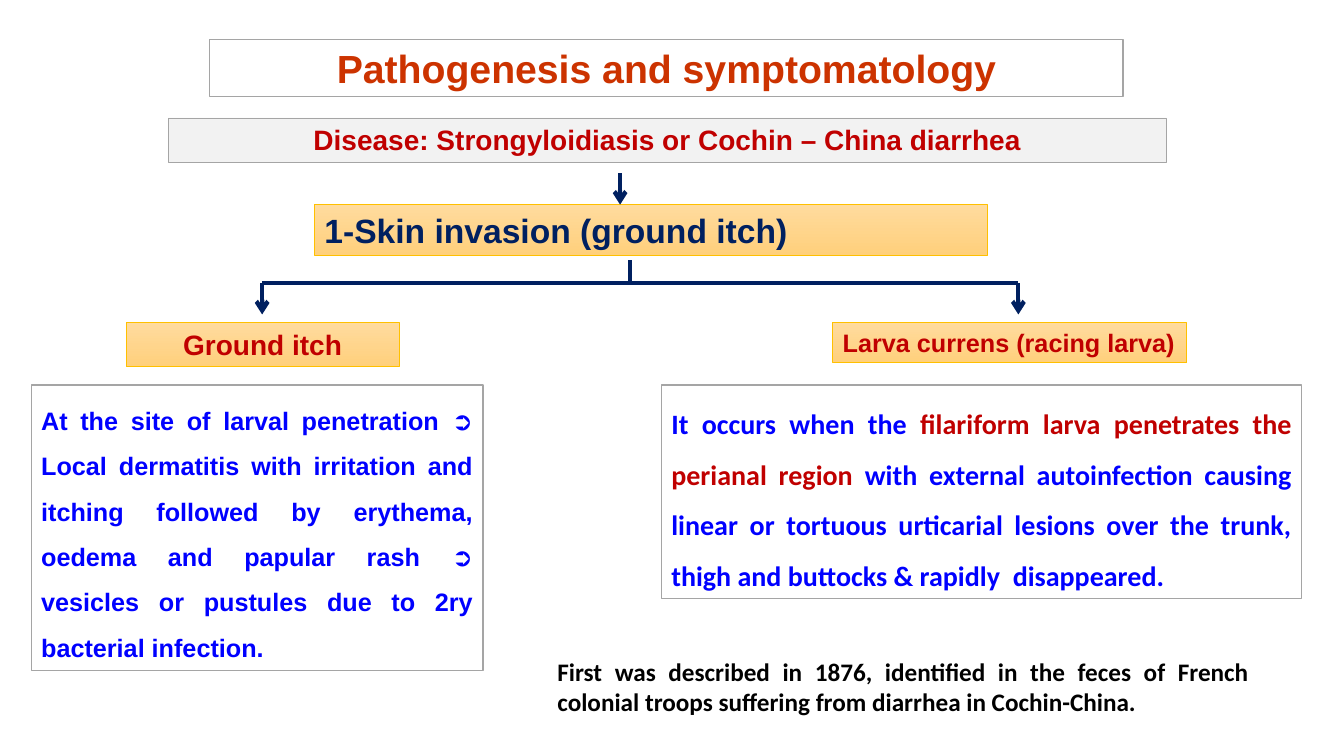
"""Build the slide on the pathogenesis and symptomatology of strongyloidiasis."""
from dataclasses import dataclass

from lxml.etree import SubElement
from pptx import Presentation
from pptx.dml.color import RGBColor
from pptx.enum.shapes import MSO_CONNECTOR, MSO_SHAPE
from pptx.enum.text import MSO_ANCHOR, MSO_AUTO_SIZE, PP_ALIGN
from pptx.oxml.ns import qn
from pptx.util import Inches, Pt

NAVY, RED, BLUE, GREY, GOLD = "002060", "C00000", "0000FF", "A5A5A5", "FFC000"
ORANGE = ("FFDB9E", "FFD07C")
WHITE = ("FFFFFF",)
LEFT, CENTER, JUSTIFY = PP_ALIGN.LEFT, PP_ALIGN.CENTER, PP_ALIGN.JUSTIFY


@dataclass
class Box:
    left: float
    top: float
    width: float
    height: float
    runs: list[tuple[str, str]]
    size: int
    align: PP_ALIGN = CENTER
    font: str = "Arial"
    fill: tuple[str, ...] = ()
    line: str = GREY
    line_width: float = 0.5
    spacing: float = 1.0
    wrap: bool = True


@dataclass
class Link:
    x1: float
    y1: float
    x2: float
    y2: float
    arrow: bool = False


BOXES = [
    Box(2.08, 0.39, 9.06, 0.57, [("Pathogenesis and symptomatology", "CC3300")], 28,
        fill=WHITE, line_width=1),
    Box(1.67, 1.17, 9.9, 0.44,
        [("Disease: Strongyloidiasis or Cochin – China diarrhea", RED)], 20, fill=("F2F2F2",)),
    Box(3.12, 2.03, 6.67, 0.5, [("1-Skin invasion (ground itch)", NAVY)], 24, LEFT,
        fill=ORANGE, line=GOLD),
    Box(6.56, 3.82, 6.35, 2.12, [
        ("It occurs when the ", BLUE),
        ("filariform larva penetrates the perianal region ", RED),
        ("with external autoinfection causing linear or tortuous urticarial lesions over "
         "the trunk, thigh and buttocks & rapidly  disappeared.", BLUE),
    ], 20, JUSTIFY, "Calibri", WHITE, line_width=1, spacing=1.5),
    Box(0.31, 3.82, 4.48, 2.83, [
        ("At the site of larval penetration ➲ Local dermatitis with irritation and itching "
         "followed by erythema, oedema and papular rash ➲ vesicles or pustules due to 2ry "
         "bacterial infection.", BLUE),
    ], 18, JUSTIFY, fill=WHITE, line_width=1, spacing=1.5),
    Box(1.25, 3.2, 2.71, 0.44, [("Ground itch", RED)], 20, fill=ORANGE, line=GOLD),
    Box(8.26, 3.2, 3.51, 0.4, [("Larva currens (racing larva)", RED)], 18, LEFT,
        fill=ORANGE, line=GOLD, wrap=False),
    Box(5.43, 6.46, 7.06, 0.71, [
        ("First was described in 1876, identified in the feces of French colonial troops "
         "suffering from diarrhea in Cochin-China.", "000000"),
    ], 18, JUSTIFY, "Calibri"),
]

TRUNK_X, BRANCH_Y, BRANCH_XS = 6.25, 2.81, (2.6, 10.1)
LINKS = [
    Link(6.15, 1.72, 6.15, 2.03, True),
    Link(TRUNK_X, 2.58, TRUNK_X, BRANCH_Y),
    *(Link(TRUNK_X, BRANCH_Y, x, BRANCH_Y) for x in BRANCH_XS),
    *(Link(x, BRANCH_Y, x, 3.12, True) for x in BRANCH_XS),
]


def color(value: str) -> RGBColor:
    return RGBColor.from_string(value)


def draw_box(s, box: Box) -> None:
    frame = [Inches(v) for v in (box.left, box.top, box.width, box.height)]
    if box.fill:
        sp = s.shapes.add_shape(MSO_SHAPE.RECTANGLE, *frame)
        sp.shadow.inherit = False
        sp.line.color.rgb = color(box.line)
        sp.line.width = Pt(box.line_width)
        if len(box.fill) == 1:
            sp.fill.solid()
            sp.fill.fore_color.rgb = color(box.fill[0])
        else:
            sp.fill.gradient()
            sp.fill.gradient_angle = 270
            for stop, value in zip(sp.fill.gradient_stops, box.fill):
                stop.color.rgb = color(value)
    else:
        sp = s.shapes.add_textbox(*frame)
    tf = sp.text_frame
    tf.word_wrap = box.wrap
    tf.auto_size = MSO_AUTO_SIZE.SHAPE_TO_FIT_TEXT
    tf.vertical_anchor = MSO_ANCHOR.TOP
    p = tf.paragraphs[0]
    p.alignment = box.align
    p.line_spacing = box.spacing
    p.font.name, p.font.size, p.font.bold = box.font, Pt(box.size), True
    for text, value in box.runs:
        r = p.add_run()
        r.text = text
        r.font.color.rgb = color(value)


def draw_link(s, link: Link) -> None:
    ends = [Inches(v) for v in (link.x1, link.y1, link.x2, link.y2)]
    cxn = s.shapes.add_connector(MSO_CONNECTOR.STRAIGHT, *ends)
    cxn.line.color.rgb = color(NAVY)
    cxn.line.width = Pt(3)
    if link.arrow:
        SubElement(cxn.line._get_or_add_ln(), qn("a:tailEnd"), type="arrow")
    SubElement(cxn._element.spPr, qn("a:effectLst"))


def main() -> None:
    prs = Presentation()
    prs.slide_width, prs.slide_height = Inches(13.33), Inches(7.5)
    s = prs.slides.add_slide(prs.slide_layouts[6])
    for box in BOXES:
        draw_box(s, box)
    for link in LINKS:
        draw_link(s, link)
    prs.save("out.pptx")


if __name__ == "__main__":
    main()
